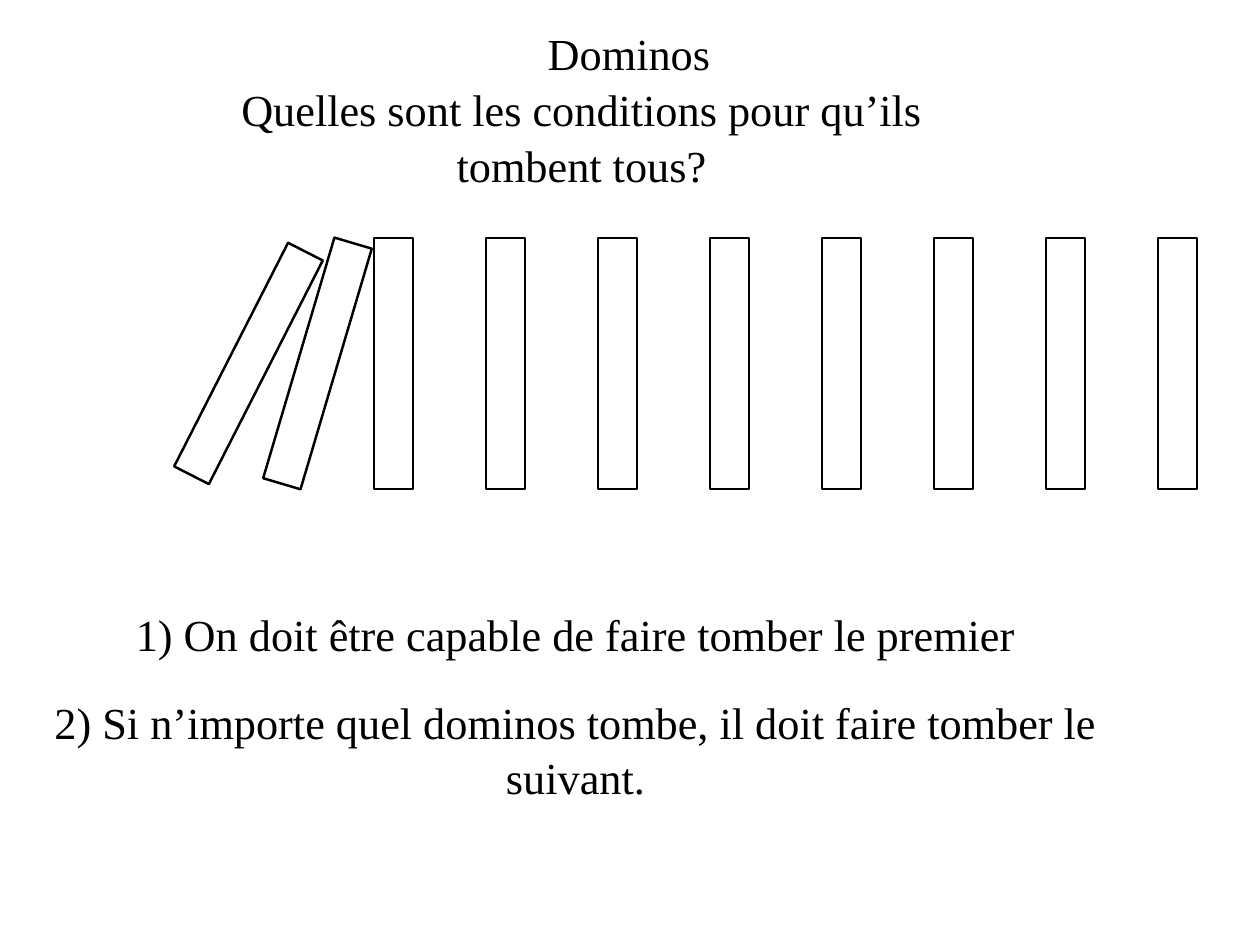
from pptx import Presentation
from pptx import util as u
from pptx.dml.color import RGBColor
from pptx.enum import shapes, text

PX = 10320  # EMU per px


def color(hex_value):
    return RGBColor.from_string(hex_value)


def write(sp, box, lines, wrap=True):
    sp.left, sp.top, sp.width, sp.height = [v * PX for v in box]
    tf = sp.text_frame
    frame = {"word_wrap": wrap, "auto_size": text.MSO_AUTO_SIZE.NONE,
             "vertical_anchor": text.MSO_ANCHOR.MIDDLE}
    for side in ("left", "top", "right", "bottom"):
        frame["margin_" + side] = 5 * PX
    for name, value in frame.items():
        setattr(tf, name, value)
    for i, line in enumerate(lines):
        p = tf.add_paragraph() if i else tf.paragraphs[0]
        p.alignment = text.PP_ALIGN.CENTER
        p.line_spacing = 1.05
        p.space_before = u.Pt(26 if i else 0)
        r = p.add_run()
        r.text = line
        for name, value in {"name": "Times New Roman", "size": u.Pt(36)}.items():
            setattr(r.font, name, value)
        r.font.color.rgb = color("000000")


prs = Presentation()
prs.slide_width, prs.slide_height = 1260 * PX, 945 * PX
s = prs.slides.add_slide(prs.slide_layouts[1])
s.background.fill.solid()
s.background.fill.fore_color.rgb = color("FFFFFF")

# Title and question
write(s.shapes.title, (542, 21, 174, 60), ["Dominos"], wrap=False)
write(s.shapes.add_textbox(0, 0, 0, 0), (159, 76, 845, 119),
      ["Quelles sont les conditions pour qu’ils tombent tous?"])

# Dominoes: two falling, then eight standing at equal gaps
dominoes = [(229, 27), (298, 16.5)] + [(374 + 112 * i, 0) for i in range(8)]
for left, angle in dominoes:
    sp = s.shapes.add_shape(shapes.MSO_SHAPE.RECTANGLE,
                            left * PX, 238 * PX, 39 * PX, 251 * PX)
    sp.rotation = angle
    sp.shadow.inherit = False
    sp.fill.solid()
    sp.fill.fore_color.rgb = color("FFFFFF")
    sp.line.color.rgb = color("000000")
    sp.line.width = u.Pt(2)

# Conditions, numbered in the text, so without bullets
body = s.placeholders[1]
write(body, (0, 601, 1151, 206),
      ["1) On doit être capable de faire tomber le premier",
       "2) Si n’importe quel dominos tombe, il doit faire tomber le suivant."])
for p in body.text_frame.paragraphs:
    pPr = p._p.get_or_add_pPr()
    pPr.set("marL", "0")
    pPr.set("indent", "0")
    pPr.append(pPr.makeelement(
        "{http://schemas.openxmlformats.org/drawingml/2006/main}buNone", {}))

prs.save("out.pptx")
